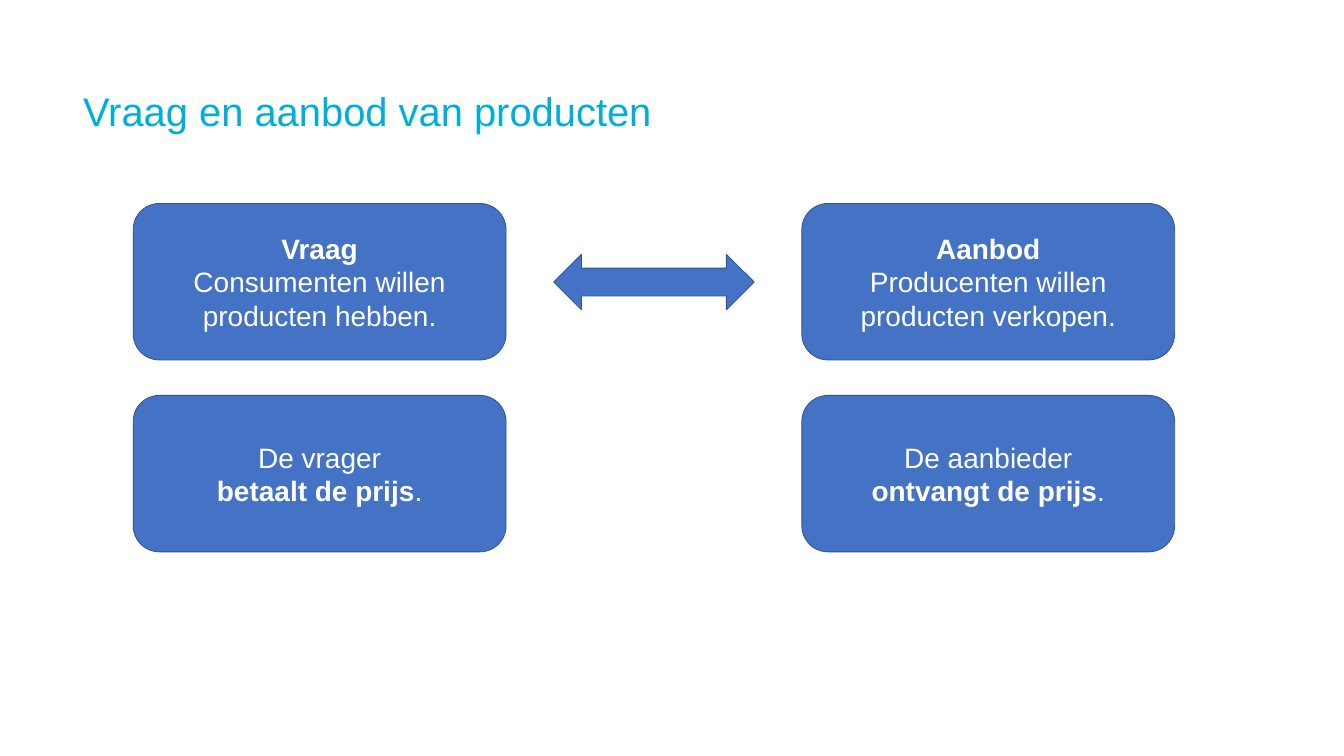
from pptx import Presentation
from pptx.dml.color import RGBColor
from pptx.enum.shapes import MSO_SHAPE as Kind
from pptx.enum.text import MSO_ANCHOR as Anchor, PP_ALIGN as Align
from pptx.util import Pt

TITLE = "Vraag en aanbod van producten"
CARDS = [
    [
        [[("Vraag", True)], [("Consumenten willen producten hebben.", False)]],
        [[("Aanbod", True)], [("Producenten willen producten verkopen.", False)]],
    ],
    [
        [[("De vrager", False)], [("betaalt de prijs", True), (".", False)]],
        [[("De aanbieder", False)], [("ontvangt de prijs", True), (".", False)]],
    ],
]

CYAN = RGBColor(0x00, 0xAE, 0xDA)
BLUE = RGBColor(0x44, 0x72, 0xC4)
NAVY = RGBColor(0x32, 0x54, 0x91)
WHITE = RGBColor(0xFF, 0xFF, 0xFF)
FONT = "Arial"

PX = 9144
WIDE, HIGH = 2199, 1237
LEFT, TOP = 218, 333
CARD_W, CARD_H = 610, 256
STEP_X, STEP_Y = 1094, 314
ARROW = (906, 416, 328, 91)


def scale(*nums):
    return [n * PX for n in nums]


def add_block(slide, kind, box):
    block = slide.shapes.add_shape(kind, *scale(*box))
    block.shadow.inherit = False
    block.fill.solid()
    block.fill.fore_color.rgb = BLUE
    block.line.color.rgb = NAVY
    block.line.width = Pt(1)
    return block


def set_font(para, size, color):
    para.font.name = FONT
    para.font.size = Pt(size)
    para.font.color.rgb = color


def add_card(slide, box, lines):
    frame = add_block(slide, Kind.ROUNDED_RECTANGLE, box).text_frame
    frame.word_wrap = True
    frame.vertical_anchor = Anchor.MIDDLE
    for i, line in enumerate(lines):
        para = frame.add_paragraph() if i else frame.paragraphs[0]
        para.alignment = Align.CENTER
        set_font(para, 33, WHITE)
        for text, bold in line:
            run = para.add_run()
            run.text = text
            run.font.bold = bold


def add_title(slide):
    title = slide.shapes.title
    title.left, title.top, title.width, title.height = scale(136, 136, 1925, 91)
    frame = title.text_frame
    frame.text = TITLE
    frame.margin_left = frame.margin_right = 0
    frame.margin_top = frame.margin_bottom = 0
    frame.vertical_anchor = Anchor.MIDDLE
    para = frame.paragraphs[0]
    para.alignment = Align.LEFT
    set_font(para, 47, CYAN)


def main():
    deck = Presentation()
    deck.slide_width, deck.slide_height = scale(WIDE, HIGH)
    slide = deck.slides.add_slide(deck.slide_layouts[5])
    add_title(slide)
    for row, cards in enumerate(CARDS):
        for col, lines in enumerate(cards):
            box = (LEFT + col * STEP_X, TOP + row * STEP_Y, CARD_W, CARD_H)
            add_card(slide, box, lines)
    add_block(slide, Kind.LEFT_RIGHT_ARROW, ARROW)
    deck.save("out.pptx")


if __name__ == "__main__":
    main()
